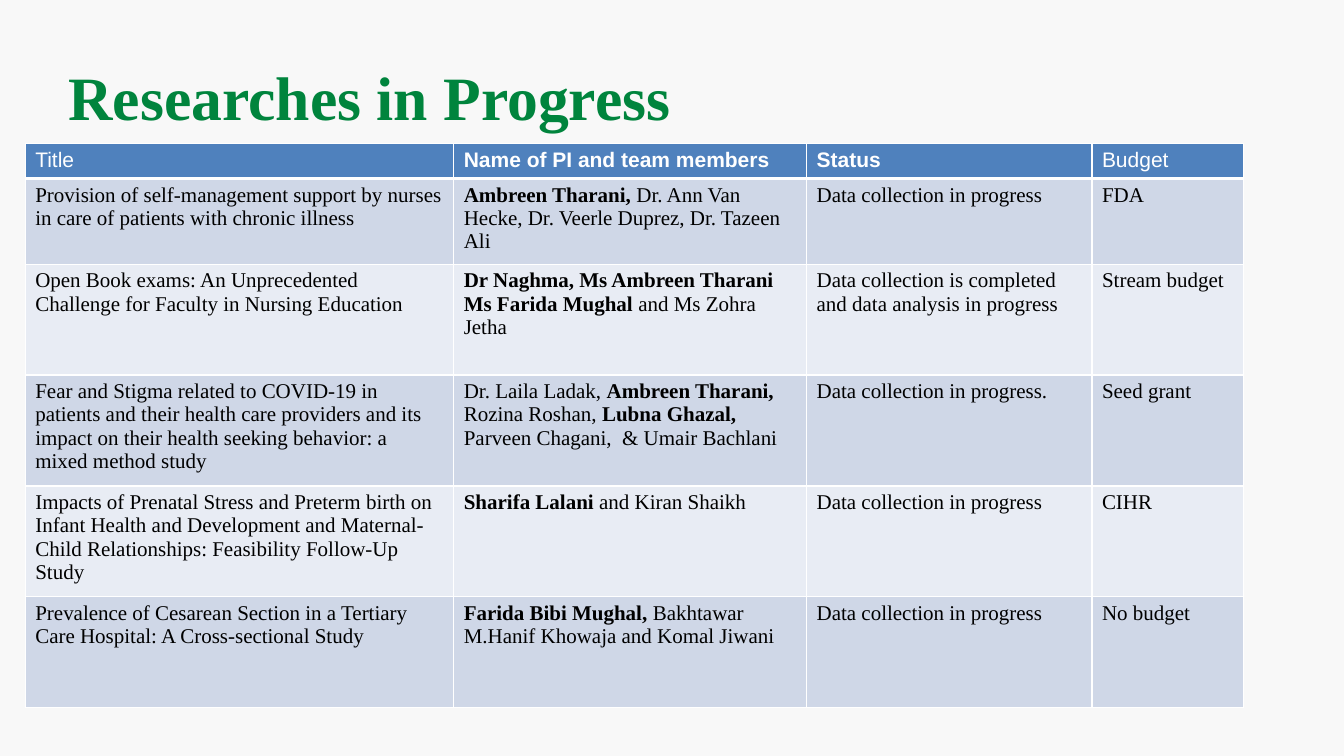
"""Build the slide listing the research projects in progress."""
from pptx import Presentation
from pptx.dml.color import RGBColor
from pptx.enum.text import MSO_ANCHOR
from pptx.oxml import parse_xml
from pptx.oxml.ns import nsdecls
from pptx.util import Inches, Pt

MIDDLE = MSO_ANCHOR.MIDDLE
THEME = {
    "background": "F8F8F8",
    "header_fill": "4F81BD",
    "bands": ["CFD7E7", "E8ECF4"],
    "border": "FFFFFF",
    "heading": {"name": "Times New Roman", "size": Pt(44), "color": "00843D"},
    "header": {"name": "Arial", "size": Pt(15), "color": "FFFFFF"},
    "body": {"name": "Times New Roman", "size": Pt(15), "color": "000000"},
}
THIN, THICK = 1, 3
COLUMN_WIDTHS = [4.25, 3.5, 2.83, 1.5]
ROW_HEIGHTS = [0.35, 0.85] + [1.1] * 4
PROJECTS = [
    ["Title", "**Name of PI and team members**", "**Status**", "Budget"],
    ["Provision of self-management support by nurses in care of patients with chronic illness",
     "**Ambreen Tharani, **Dr. Ann Van Hecke, Dr. Veerle Duprez, Dr. Tazeen Ali",
     "Data collection in progress", "FDA"],
    ["Open Book exams: An Unprecedented Challenge for Faculty in Nursing Education",
     "**Dr Naghma, Ms Ambreen Tharani**\n**Ms Farida Mughal **and Ms Zohra Jetha",
     "Data collection is completed and data analysis in progress", "Stream budget"],
    ["Fear and Stigma related to COVID-19 in patients and their health care providers "
     "and its impact on their health seeking behavior: a mixed method study",
     "Dr. Laila Ladak, **Ambreen Tharani, **Rozina Roshan, **Lubna Ghazal, **"
     "Parveen Chagani,  & Umair Bachlani",
     "Data collection in progress.", "Seed grant"],
    ["Impacts of Prenatal Stress and Preterm birth on Infant Health and Development "
     "and Maternal-Child Relationships: Feasibility Follow-Up Study",
     "**Sharifa Lalani** and Kiran Shaikh",
     "Data collection in progress", "CIHR"],
    ["Prevalence of Cesarean Section in a Tertiary Care Hospital: A Cross-sectional Study",
     "**Farida Bibi Mughal, **Bakhtawar M.Hanif Khowaja and Komal Jiwani",
     "Data collection in progress", "No budget"],
]


def write(frame, text, style):
    """Write lines as paragraphs, with bold between double asterisks."""
    for line_number, line in enumerate(text.split("\n")):
        paragraph = frame.add_paragraph() if line_number else frame.paragraphs[0]
        for part_number, part in enumerate(line.split("**")):
            if part:
                run = paragraph.add_run()
                run.text = part
                run.font.bold = part_number % 2 == 1
                for attribute in ("name", "size"):
                    setattr(run.font, attribute, style[attribute])
                run.font.color.rgb = RGBColor.from_string(style["color"])


def add_borders(cell, widths):
    """Draw the four sides of a cell, widths in points."""
    for side, width in widths.items():
        cell._tc.get_or_add_tcPr().append(parse_xml(
            f'<a:ln{side} {nsdecls("a")} w="{Pt(width)}"><a:solidFill>'
            f'<a:srgbClr val="{THEME["border"]}"/></a:solidFill></a:ln{side}>'))


deck = Presentation()
deck.slide_width, deck.slide_height = Inches(13.33), Inches(7.5)
slide = deck.slides.add_slide(deck.slide_layouts[6])
slide.background.fill.solid()
slide.background.fill.fore_color.rgb = RGBColor.from_string(THEME["background"])

heading = slide.shapes.add_textbox(Inches(0.58), Inches(0.33), Inches(12), Inches(1.25)).text_frame
for attribute, value in {"word_wrap": True, "vertical_anchor": MIDDLE}.items():
    setattr(heading, attribute, value)
write(heading, "**Researches in Progress**", THEME["heading"])

projects = slide.shapes.add_table(
    len(ROW_HEIGHTS), len(COLUMN_WIDTHS), Inches(0.25), Inches(1.42),
    Inches(sum(COLUMN_WIDTHS)), Inches(sum(ROW_HEIGHTS))).table
projects.horz_banding = False
for column, width in zip(projects.columns, COLUMN_WIDTHS):
    column.width = Inches(width)
for row_number, (row, height) in enumerate(zip(projects.rows, ROW_HEIGHTS)):
    row.height = Inches(height)
    is_header = row_number == 0
    fill = THEME["header_fill"] if is_header else THEME["bands"][(row_number - 1) % 2]
    widths = {"L": THIN, "R": THIN, "T": THICK if row_number == 1 else THIN,
              "B": THICK if is_header else THIN}
    for cell, text in zip(row.cells, PROJECTS[row_number]):
        add_borders(cell, widths)
        cell.fill.solid()
        cell.fill.fore_color.rgb = RGBColor.from_string(fill)
        write(cell.text_frame, text, THEME["header" if is_header else "body"])

deck.save("out.pptx")
